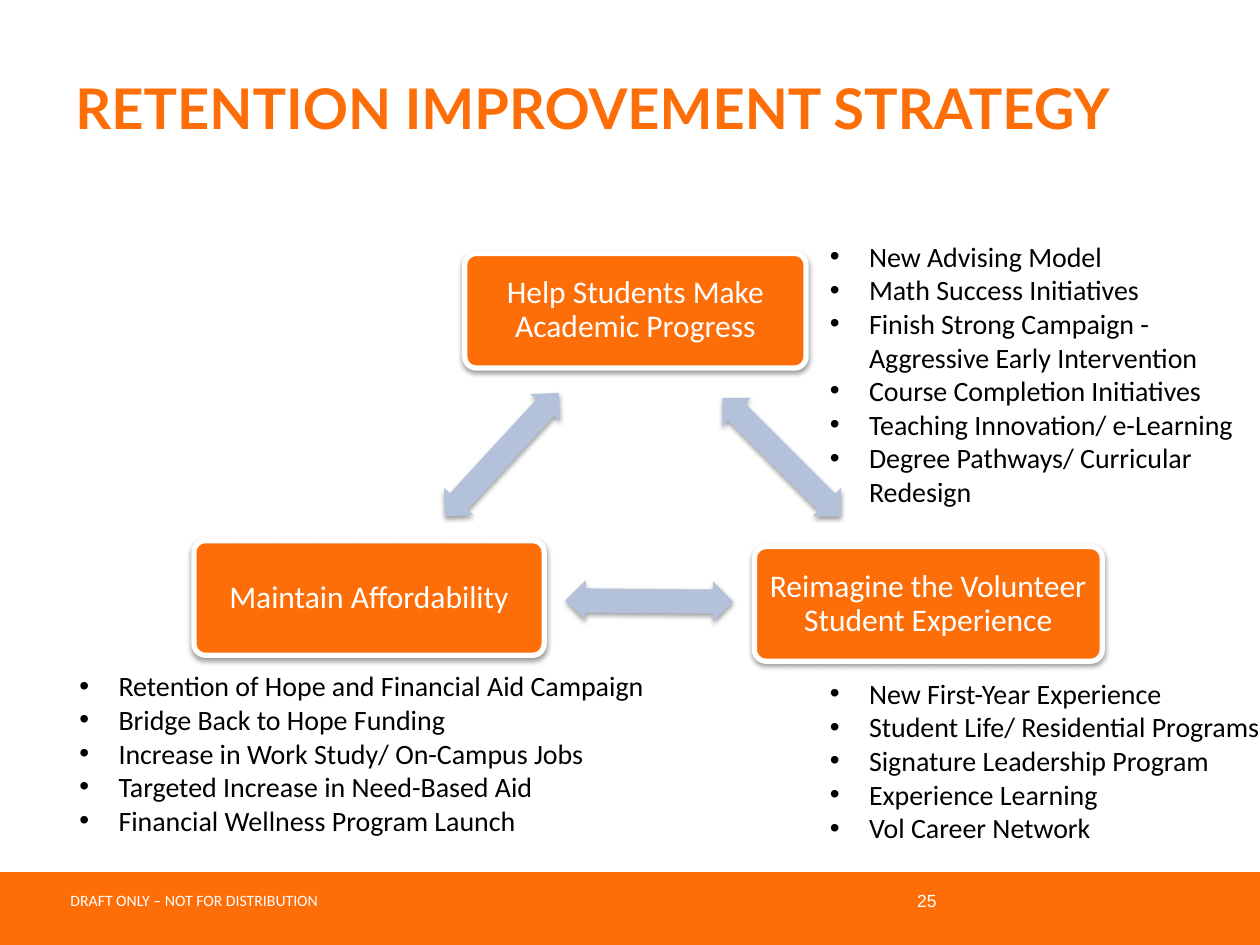
from lxml import etree
from pptx import Presentation
from pptx.dml.color import RGBColor
from pptx.enum.shapes import MSO_SHAPE
from pptx.enum.text import MSO_ANCHOR, PP_ALIGN
from pptx.oxml.ns import qn
from pptx.util import Cm, Pt

RECT = MSO_SHAPE.RECTANGLE
ROUNDED = MSO_SHAPE.ROUNDED_RECTANGLE
DOUBLE_ARROW = MSO_SHAPE.LEFT_RIGHT_ARROW
TOP, MIDDLE = MSO_ANCHOR.TOP, MSO_ANCHOR.MIDDLE
LEFT, CENTER, RIGHT = PP_ALIGN.LEFT, PP_ALIGN.CENTER, PP_ALIGN.RIGHT

ORANGE, WHITE, BLACK, PALE_BLUE = "FD6D08", "FFFFFF", "000000", "B3C1DB"

GOALS = [
    (9.37, 5.11, 6.88, "Help Students Make Academic Progress"),
    (15.21, 11.02, 7.01, "Reimagine the Volunteer Student Experience"),
    (3.91, 10.9, 7.06, "Maintain Affordability"),
]
ARROWS = [(14.07, 8.81, 45), (11.4, 11.71, 180.5), (8.43, 8.76, 312.6)]
LISTS = [
    (16.48, 4.7, 9.04, 5.74, [
        "New Advising Model",
        "Math Success Initiatives",
        "Finish Strong Campaign - Aggressive Early Intervention",
        "Course Completion Initiatives",
        "Teaching Innovation/ e-Learning",
        "Degree Pathways/ Curricular Redesign",
    ]),
    (16.48, 13.51, 10.46, 5.05, [
        "New First-Year Experience",
        "Student Life/ Residential Programs",
        "Signature Leadership Program",
        "Experience Learning",
        "Vol Career Network",
    ]),
    (1.35, 13.36, 12.8, 3.68, [
        "Retention of Hope and Financial Aid Campaign",
        "Bridge Back to Hope Funding",
        "Increase in Work Study/ On-Campus Jobs",
        "Targeted Increase in Need-Based Aid",
        "Financial Wellness Program Launch",
    ]),
]


def rgb(color):
    return RGBColor.from_string(color)


def add_bullet(p):
    pPr = p._p.get_or_add_pPr()
    pPr.set("marL", str(Cm(0.79)))
    pPr.set("indent", str(-Cm(0.79)))
    etree.SubElement(pPr, qn("a:buFont"), typeface="Arial")
    etree.SubElement(pPr, qn("a:buChar"), char="•")


def write(tf, text, size=16, font="Calibri", color=BLACK, bold=False,
          align=LEFT, anchor=TOP, wrap=True, spacing=None, bullet=False):
    tf.word_wrap = wrap
    tf.vertical_anchor = anchor
    for i, line in enumerate(text.split("\n")):
        p = tf.add_paragraph() if i else tf.paragraphs[0]
        p.alignment = align
        if spacing:
            p.line_spacing = spacing
        if bullet:
            add_bullet(p)
        r = p.add_run()
        r.text = line
        r.font.size = Pt(size)
        r.font.name = font
        r.font.bold = bold
        r.font.color.rgb = rgb(color)


def add_text(s, x, y, w, h, text, **fmt):
    box = s.shapes.add_textbox(Cm(x), Cm(y), Cm(w), Cm(h))
    write(box.text_frame, text, **fmt)


def add_shadow(sp):
    effects = sp._element.spPr.find(qn("a:effectLst"))
    shadow = etree.SubElement(effects, qn("a:outerShdw"), blurRad=str(Pt(3.1)),
                              dist=str(Pt(1.6)), dir="5400000", rotWithShape="0")
    color = etree.SubElement(shadow, qn("a:srgbClr"), val=BLACK)
    etree.SubElement(color, qn("a:alpha"), val="38000")


def add_shape(s, kind, x, y, w, h, fill):
    sp = s.shapes.add_shape(kind, Cm(x), Cm(y), Cm(w), Cm(h))
    sp.shadow.inherit = False
    sp.fill.solid()
    sp.fill.fore_color.rgb = rgb(fill)
    sp.line.fill.background()
    return sp


def add_goal(s, x, y, w, text):
    sp = add_shape(s, ROUNDED, x, y, w, 2.31, ORANGE)
    sp.adjustments[0] = 0.1
    sp.line.color.rgb = rgb(WHITE)
    sp.line.width = Pt(3)
    add_shadow(sp)
    tf = sp.text_frame
    tf.margin_left = tf.margin_right = tf.margin_top = tf.margin_bottom = Cm(0.2)
    write(tf, text, size=18, color=WHITE, align=CENTER, anchor=MIDDLE, spacing=0.9)


def add_arrow(s, x, y, angle):
    sp = add_shape(s, DOUBLE_ARROW, x, y, 3.38, 0.81, PALE_BLUE)
    sp.adjustments[0] = 0.6
    sp.adjustments[1] = 0.5
    sp.rotation = angle
    add_shadow(sp)


def add_footer(s):
    add_shape(s, RECT, 0, 17.58, 25.4, 1.47, ORANGE)
    add_text(s, 1.17, 17.83, 5.59, 0.64, "DRAFT ONLY – NOT FOR DISTRIBUTION",
             size=9, color=WHITE, wrap=False)
    add_text(s, 13.21, 17.65, 5.92, 1.02, "25", size=10, font="Arial",
             color=WHITE, align=RIGHT, anchor=MIDDLE)


def main():
    prs = Presentation()
    prs.slide_width, prs.slide_height = Cm(25.4), Cm(19.05)
    s = prs.slides.add_slide(prs.slide_layouts[6])
    add_footer(s)
    add_text(s, 1.27, 0.56, 22.86, 3.18, "RETENTION IMPROVEMENT STRATEGY",
             size=32, font="Lato", color=ORANGE, bold=True, anchor=MIDDLE)
    for goal in GOALS:
        add_goal(s, *goal)
    for arrow in ARROWS:
        add_arrow(s, *arrow)
    for x, y, w, h, items in LISTS:
        add_text(s, x, y, w, h, "\n".join(items), bullet=True)
    prs.save("out.pptx")


if __name__ == "__main__":
    main()
